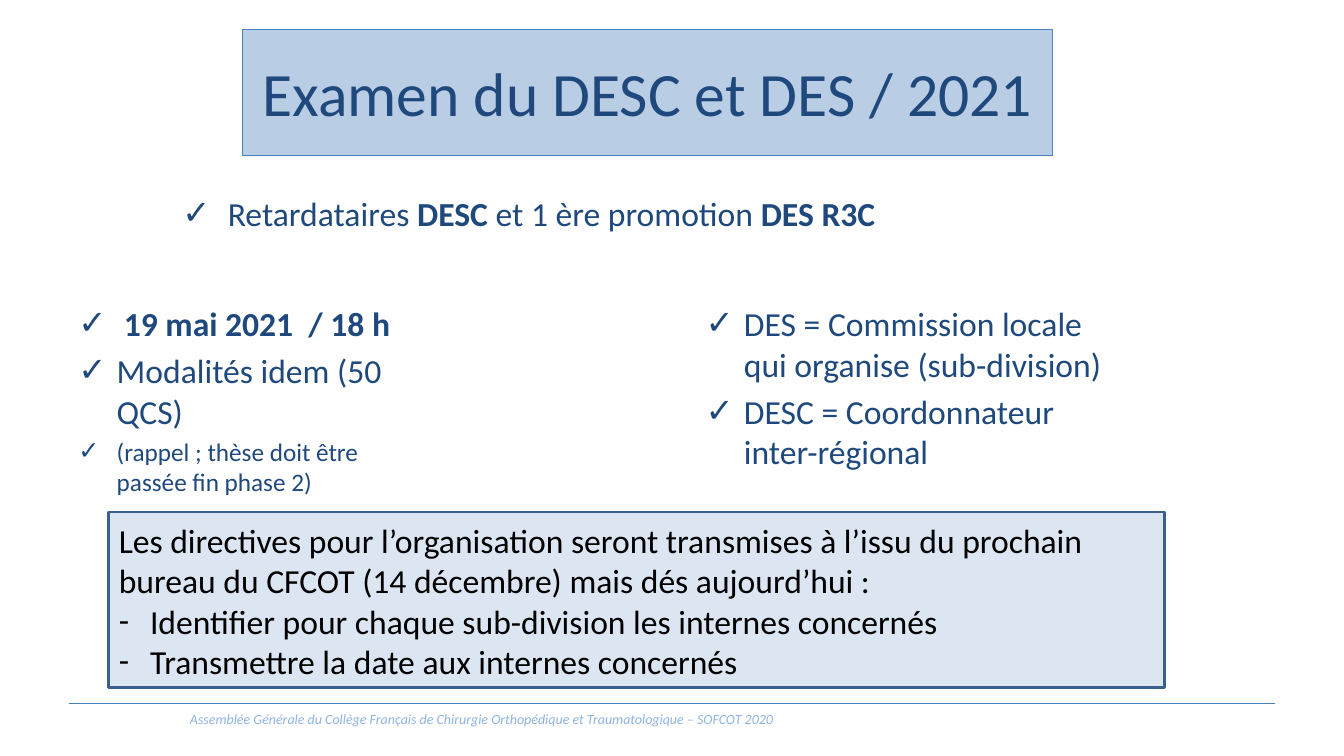
import pptx
import pptx.dml.color
import pptx.enum.shapes
import pptx.enum.text
import pptx.oxml.ns
import pptx.util
from lxml import etree
from pptx.util import Inches

COLOURS = {
    "navy": "1F497D", "black": "000000", "footer": "8EB4E3", "rule": "4B7EBC",
    "title_fill": "B9CDE5", "title_line": "4F81BD",
    "panel_fill": "DCE6F2", "panel_line": "3A5F8C",
}


def colour(name):
    return pptx.dml.color.RGBColor.from_string(COLOURS[name])


def write(box, paragraphs, ink="navy", space=0.2):
    """Fill a box from (size, bullet, indent, [(text, bold), ...]) entries.

    The space before each paragraph but the first is a share of its size.
    """
    frame = box.text_frame
    frame.word_wrap = True
    for number, (size, bullet, indent, spans) in enumerate(paragraphs):
        para = frame.paragraphs[0] if number == 0 else frame.add_paragraph()
        para.space_before = pptx.util.Pt(size * space if number else 0)
        if bullet:
            properties = para._p.get_or_add_pPr()
            properties.set("marL", str(Inches(indent)))
            properties.set("indent", str(-Inches(indent)))
            font = etree.SubElement(properties, pptx.oxml.ns.qn("a:buFont"))
            font.set("typeface", "Wingdings" if bullet == "ü" else "Calibri")
            mark = etree.SubElement(properties, pptx.oxml.ns.qn("a:buChar"))
            mark.set("char", bullet)
        for text, bold in spans:
            span = para.add_run()
            span.text = text
            span.font.name = "Calibri"
            span.font.size = pptx.util.Pt(size)
            span.font.bold = bold
            span.font.color.rgb = colour(ink)


deck = pptx.Presentation()
deck.slide_width, deck.slide_height = Inches(13.33), Inches(7.5)
page = deck.slides.add_slide(deck.slide_layouts[1])

# Footer
rule = page.shapes.add_connector(
    pptx.enum.shapes.MSO_CONNECTOR.STRAIGHT,
    Inches(0.68), Inches(6.98), Inches(12.65), Inches(6.98))
rule.line.color.rgb = colour("rule")
rule.line.width = pptx.util.Pt(0.75)
etree.SubElement(rule._element.spPr, pptx.oxml.ns.qn("a:effectLst"))

footer = page.shapes.add_textbox(Inches(0.68), Inches(7), Inches(8.19), Inches(0.27))
write(footer, [(10, None, 0, [(
    "Assemblée Générale du Collège Français de Chirurgie Orthopédique "
    "et Traumatologique – SOFCOT 2020", False)])], "footer")
footer_para = footer.text_frame.paragraphs[0]
footer_para.alignment = pptx.enum.text.PP_ALIGN.CENTER
footer_para.runs[0].font.italic = True

# Title
title = page.shapes.title
title.left, title.top = Inches(2.41), Inches(0.29)
title.width, title.height = Inches(8.03), Inches(1.25)
write(title, [(44, None, 0, [("Examen du DESC et DES / 2021", False)])])
title.text_frame.auto_size = pptx.enum.text.MSO_AUTO_SIZE.NONE
title.text_frame.vertical_anchor = pptx.enum.text.MSO_ANCHOR.MIDDLE
title.text_frame.paragraphs[0].alignment = pptx.enum.text.PP_ALIGN.CENTER

# Candidates concerned
candidates = page.placeholders[1]
candidates.left, candidates.top = Inches(1.71), Inches(1.86)
candidates.width, candidates.height = Inches(10.63), Inches(0.48)
write(candidates, [(24, "✓", 0.45, [
    ("Retardataires ", False), ("DESC", True),
    (" et 1 ère promotion ", False), ("DES R3C", True)])])
candidates.text_frame.auto_size = pptx.enum.text.MSO_AUTO_SIZE.NONE

# Date and organisers
columns = [
    (0.68, 3.54, [
        (24, "✓", 0.45, [("19 mai 2021  / 18 h", True)]),
        (24, "✓", 0.38, [("Modalités idem (50 QCS)", False)]),
        (18, "✓", 0.38, [("(rappel ; thèse doit être passée fin phase 2)", False)])]),
    (6.9, 4.34, [
        (24, "✓", 0.38, [("DES = Commission locale qui organise (sub-division)", False)]),
        (24, "✓", 0.38, [("DESC = Coordonnateur inter-régional", False)])]),
]
for left, width, paragraphs in columns:
    column = page.shapes.add_textbox(Inches(left), Inches(2.96), Inches(width), Inches(0.48))
    write(column, paragraphs)

# Directives
panel = page.shapes.add_shape(
    pptx.enum.shapes.MSO_SHAPE.RECTANGLE,
    Inches(1.08), Inches(5.08), Inches(10.47), Inches(1.74))
panel.shadow.inherit = False
directives = page.shapes.add_textbox(Inches(1.08), Inches(5.11), Inches(10.47), Inches(1.72))
write(directives, [
    (24, None, 0, [(
        "Les directives pour l’organisation seront transmises à l’issu du prochain "
        "bureau du CFCOT (14 décembre) mais dés aujourd’hui :", False)]),
    (24, "-", 0.31, [("Identifier pour chaque sub-division les internes concernés", False)]),
    (24, "-", 0.31, [("Transmettre la date aux internes concernés", False)]),
], "black", 0)

for box, name, weight in [(title, "title", 0.75), (panel, "panel", 2)]:
    box.fill.solid()
    box.fill.fore_color.rgb = colour(name + "_fill")
    box.line.color.rgb = colour(name + "_line")
    box.line.width = pptx.util.Pt(weight)

deck.save("out.pptx")
